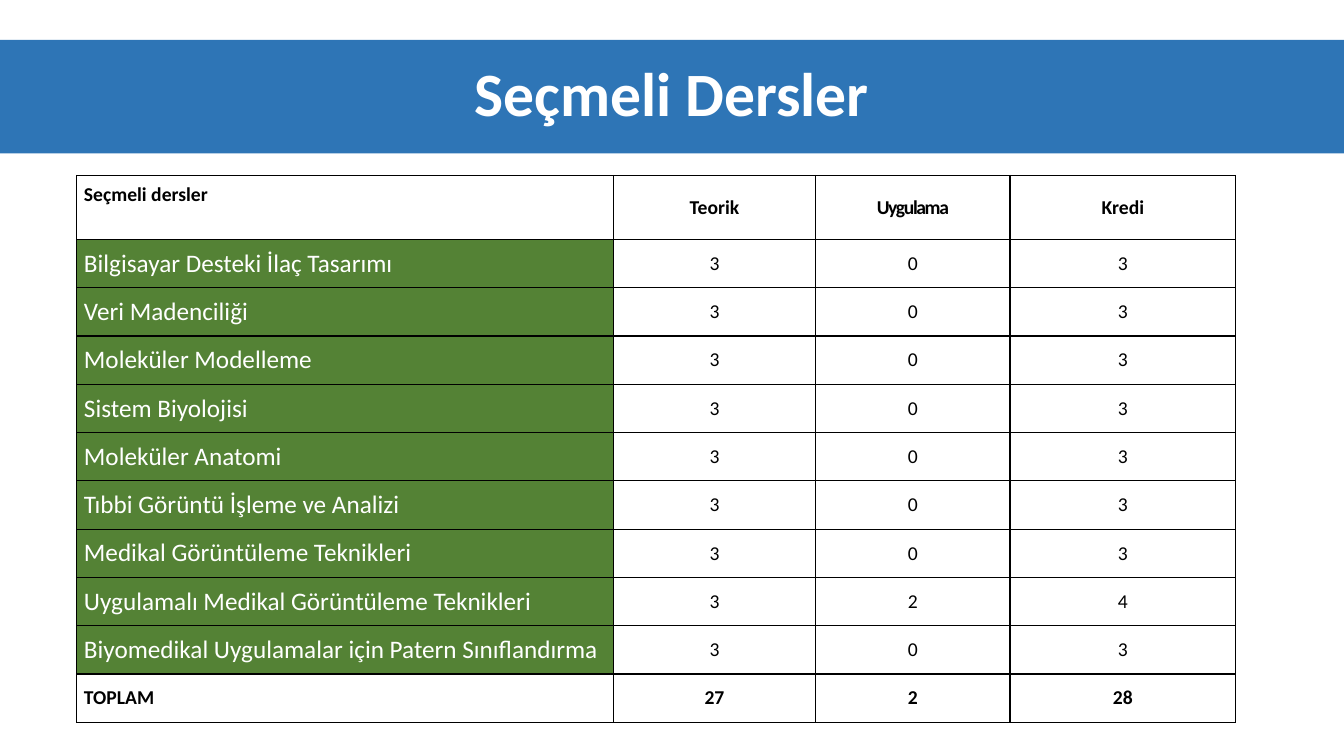
from lxml.etree import SubElement
from pptx import Presentation
from pptx.dml.color import RGBColor
from pptx.enum.text import MSO_ANCHOR, PP_ALIGN
from pptx.oxml.ns import qn
from pptx.util import Pt

PX = 9525  # EMU per px, 96 px to the inch
FONT = "Calibri"
WHITE = RGBColor(0xFF, 0xFF, 0xFF)
BLACK = RGBColor(0x00, 0x00, 0x00)
BLUE = RGBColor(0x2E, 0x75, 0xB6)
GREEN = RGBColor(0x54, 0x82, 0x35)

COL_WIDTHS = [511, 193, 185, 215]
HEADER_HEIGHT, ROW_HEIGHT = 61, 46
CELL_INSET = 7
HEADERS = ["Seçmeli dersler", "Teorik", "Uygulama", "Kredi"]
COURSES = [
    ("Bilgisayar Desteki İlaç Tasarımı", 3, 0, 3),
    ("Veri Madenciliği", 3, 0, 3),
    ("Moleküler Modelleme", 3, 0, 3),
    ("Sistem Biyolojisi", 3, 0, 3),
    ("Moleküler Anatomi", 3, 0, 3),
    ("Tıbbi Görüntü İşleme ve Analizi", 3, 0, 3),
    ("Medikal Görüntüleme Teknikleri", 3, 0, 3),
    ("Uygulamalı Medikal Görüntüleme Teknikleri", 3, 2, 4),
    ("Biyomedikal Uygulamalar için Patern Sınıflandırma", 3, 0, 3),
]
TOTALS = ("TOPLAM", 27, 2, 28)


def add_run(p, text, size, color, bold=False):
    r = p.add_run()
    r.text = str(text)
    r.font.name = FONT
    r.font.size = Pt(size)
    r.font.bold = bold
    r.font.color.rgb = color
    return r


def set_borders(cell):
    tc_pr = cell._tc.get_or_add_tcPr()
    for i, side in enumerate(("a:lnL", "a:lnR", "a:lnT", "a:lnB")):
        ln = SubElement(tc_pr, qn(side), w=str(Pt(1)))
        fill = SubElement(ln, qn("a:solidFill"))
        SubElement(fill, qn("a:srgbClr"), val=str(BLACK))
        # Borders come before the cell fill
        tc_pr.insert(i, ln)


def fill_cell(cell, text, size, color, bold, align, fill):
    cell.margin_left = cell.margin_right = CELL_INSET * PX
    cell.margin_top = cell.margin_bottom = 0
    cell.vertical_anchor = MSO_ANCHOR.MIDDLE
    if fill is None:
        cell.fill.background()
    else:
        cell.fill.solid()
        cell.fill.fore_color.rgb = fill
    set_borders(cell)
    p = cell.text_frame.paragraphs[0]
    p.alignment = align
    return add_run(p, text, size, color, bold)


def title_band(slide, x, y, w, h):
    sp = slide.shapes.title
    sp.left, sp.top, sp.width, sp.height = (v * PX for v in (x, y, w, h))
    sp.fill.solid()
    sp.fill.fore_color.rgb = BLUE
    tf = sp.text_frame
    tf.vertical_anchor = MSO_ANCHOR.MIDDLE
    p = tf.paragraphs[0]
    p.alignment = PP_ALIGN.CENTER
    p.line_spacing = 0.9
    add_run(p, "Seçmeli Dersler", 44, WHITE, True)


def course_table(slide, x, y):
    rows = [HEADERS, *COURSES, TOTALS]
    heights = [HEADER_HEIGHT] + [ROW_HEIGHT] * (len(rows) - 1)
    box = (v * PX for v in (x, y, sum(COL_WIDTHS), sum(heights)))
    table = slide.shapes.add_table(len(rows), len(HEADERS), *box).table
    table.first_row = table.horz_banding = False
    for column, width in zip(table.columns, COL_WIDTHS):
        column.width = width * PX
    for i, values in enumerate(rows):
        table.rows[i].height = heights[i] * PX
        bold = i in (0, len(rows) - 1)
        for j, value in enumerate(values):
            course = j == 0 and not bold
            align = PP_ALIGN.LEFT if j == 0 else PP_ALIGN.CENTER
            size, color, fill = (18, WHITE, GREEN) if course else (14, BLACK, None)
            r = fill_cell(table.cell(i, j), value, size, color, bold, align, fill)
            if value == "Uygulama":
                r.font._element.set("spc", "-100")
    # The first heading sits near the top of its cell
    corner = table.cell(0, 0)
    corner.vertical_anchor = MSO_ANCHOR.TOP
    corner.margin_top = CELL_INSET * PX


def main():
    prs = Presentation()
    prs.slide_width, prs.slide_height = 1280 * PX, 720 * PX
    slide = prs.slides.add_slide(prs.slide_layouts[5])
    title_band(slide, 0, 38, 1280, 108)
    course_table(slide, 73, 167)
    prs.save("out.pptx")


if __name__ == "__main__":
    main()
